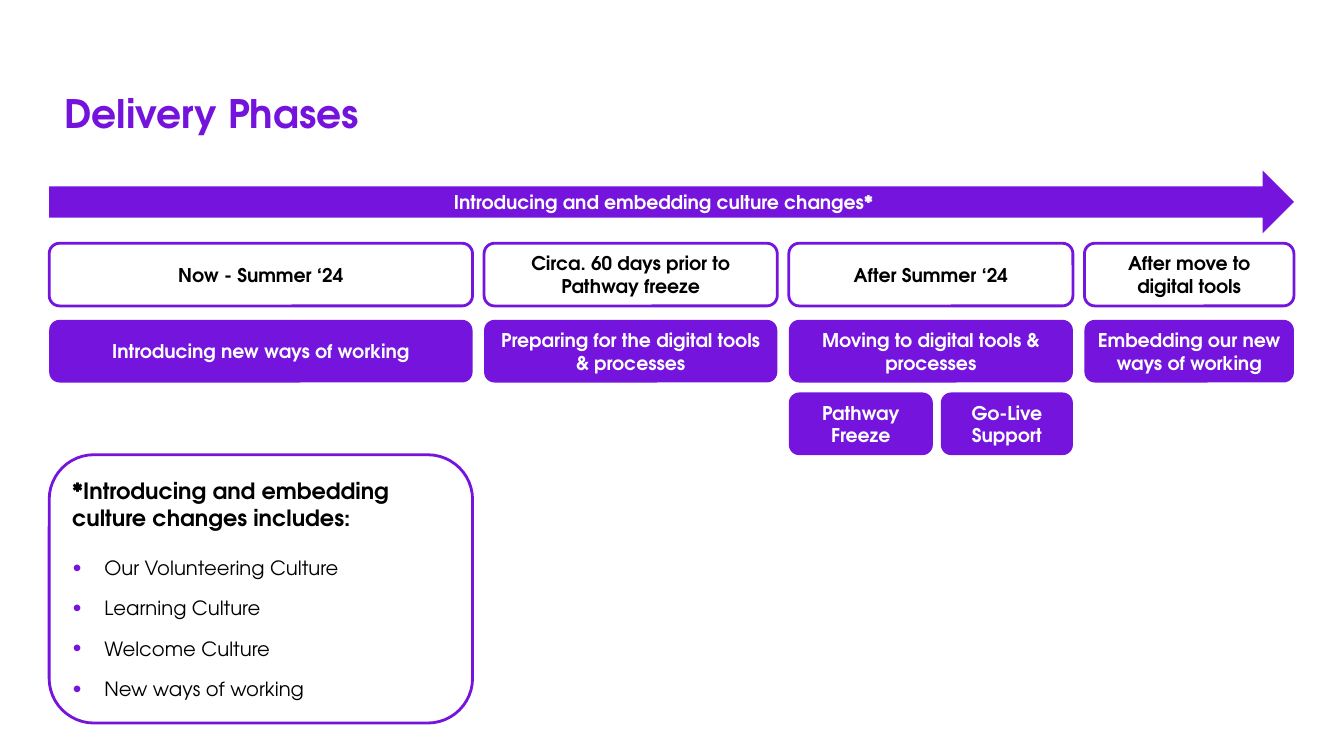
from lxml import etree
from pptx import Presentation
from pptx.dml.color import RGBColor as RGB
from pptx.enum.shapes import MSO_SHAPE as Shape
from pptx.enum.text import MSO_ANCHOR as Anchor, PP_ALIGN as Align
from pptx.oxml.ns import qn
from pptx.util import Cm, Pt

COLORS = {"title": "7413DC", "purple": "7414DC", "white": "FFFFFF", "black": "000000"}
FONT = "TeX Gyre Adventor"
LEFT, TOTAL_WIDTH, GAP = 1.24, 31.37, 0.29
BOX_HEIGHT = 1.58


def write(paragraph, text, size, color, bold=True, **layout):
    """Fill a paragraph and set its font and layout."""
    paragraph.text = text
    for name, value in layout.items():
        setattr(paragraph, name, value)
    font_format = {"name": FONT, "size": Pt(size), "bold": bold}
    for name, value in font_format.items():
        setattr(paragraph.font, name, value)
    paragraph.font.color.rgb = RGB.from_string(COLORS[color])


def add_block(kind, left, top, width, height, text="", outlined=False):
    """Add a filled or outlined shape with centred text."""
    block = slide.shapes.add_shape(kind, Cm(left), Cm(top), Cm(width), Cm(height))
    block.shadow.inherit = False
    block.fill.solid()
    block.fill.fore_color.rgb = RGB.from_string(COLORS["white" if outlined else "purple"])
    if outlined:
        block.line.color.rgb = RGB.from_string(COLORS["purple"])
        block.line.width = Pt(2)
    else:
        block.line.fill.background()
    frame = block.text_frame
    frame.word_wrap = True
    frame.vertical_anchor = Anchor.MIDDLE
    if text:
        write(frame.paragraphs[0], text, 13.5, "black" if outlined else "white",
              alignment=Align.CENTER)
    return frame


prs = Presentation()
prs.slide_width, prs.slide_height = Cm(33.87), Cm(19.05)
slide = prs.slides.add_slide(prs.slide_layouts[6])

# Title
title = slide.shapes.add_textbox(Cm(1.19), Cm(2.13), Cm(15.75), Cm(1.45)).text_frame
title.word_wrap = True
title.margin_left = Cm(0.43)
write(title.paragraphs[0], "Delivery Phases", 28, "title")

# Culture arrow across all phases
add_block(Shape.RIGHT_ARROW, LEFT, 4.3, TOTAL_WIDTH, BOX_HEIGHT,
          "Introducing and embedding culture changes*")

# Phases: width, timing, activity, steps below as (width, text)
phases = [
    (10.67, "Now - Summer ‘24", "Introducing new ways of working", []),
    (7.39, "Circa. 60 days prior to Pathway freeze",
     "Preparing for the digital tools & processes", []),
    (7.16, "After Summer ‘24", "Moving to digital tools & processes",
     [(3.63, "Pathway Freeze"), (3.33, "Go-Live Support")]),
    (5.28, "After move to digital tools", "Embedding our new ways of working", []),
]
phase_left = LEFT
for width, timing, activity, steps in phases:
    add_block(Shape.ROUNDED_RECTANGLE, phase_left, 6.13, width, BOX_HEIGHT, timing, outlined=True)
    add_block(Shape.ROUNDED_RECTANGLE, phase_left, 8.06, width, BOX_HEIGHT, activity)
    step_left = phase_left
    for step_width, step in steps:
        add_block(Shape.ROUNDED_RECTANGLE, step_left, 9.89, step_width, BOX_HEIGHT, step)
        step_left += step_width + 0.2
    phase_left += width + GAP

# Culture changes panel
panel = add_block(Shape.ROUNDED_RECTANGLE, LEFT, 11.46, phases[0][0], 6.76, outlined=True)
write(panel.paragraphs[0], "*Introducing and embedding culture changes includes:", 16, "black",
      alignment=Align.LEFT, space_after=Pt(12))

cultures = ["Our Volunteering Culture", "Learning Culture", "Welcome Culture",
            "New ways of working"]
for culture in cultures:
    item = panel.add_paragraph()
    props = item._p.get_or_add_pPr()
    props.set("marL", str(Cm(0.81)))
    props.set("indent", str(-Cm(0.79)))
    bullet_color = etree.SubElement(props, qn("a:buClr"))
    etree.SubElement(bullet_color, qn("a:srgbClr"), val=COLORS["purple"])
    etree.SubElement(props, qn("a:buSzPct"), val="125000")
    etree.SubElement(props, qn("a:buFont"), typeface="Arial")
    etree.SubElement(props, qn("a:buChar"), char="•")
    write(item, culture, 14, "black", bold=False, alignment=Align.LEFT,
          space_before=Pt(6), space_after=Pt(6))

prs.save("out.pptx")
